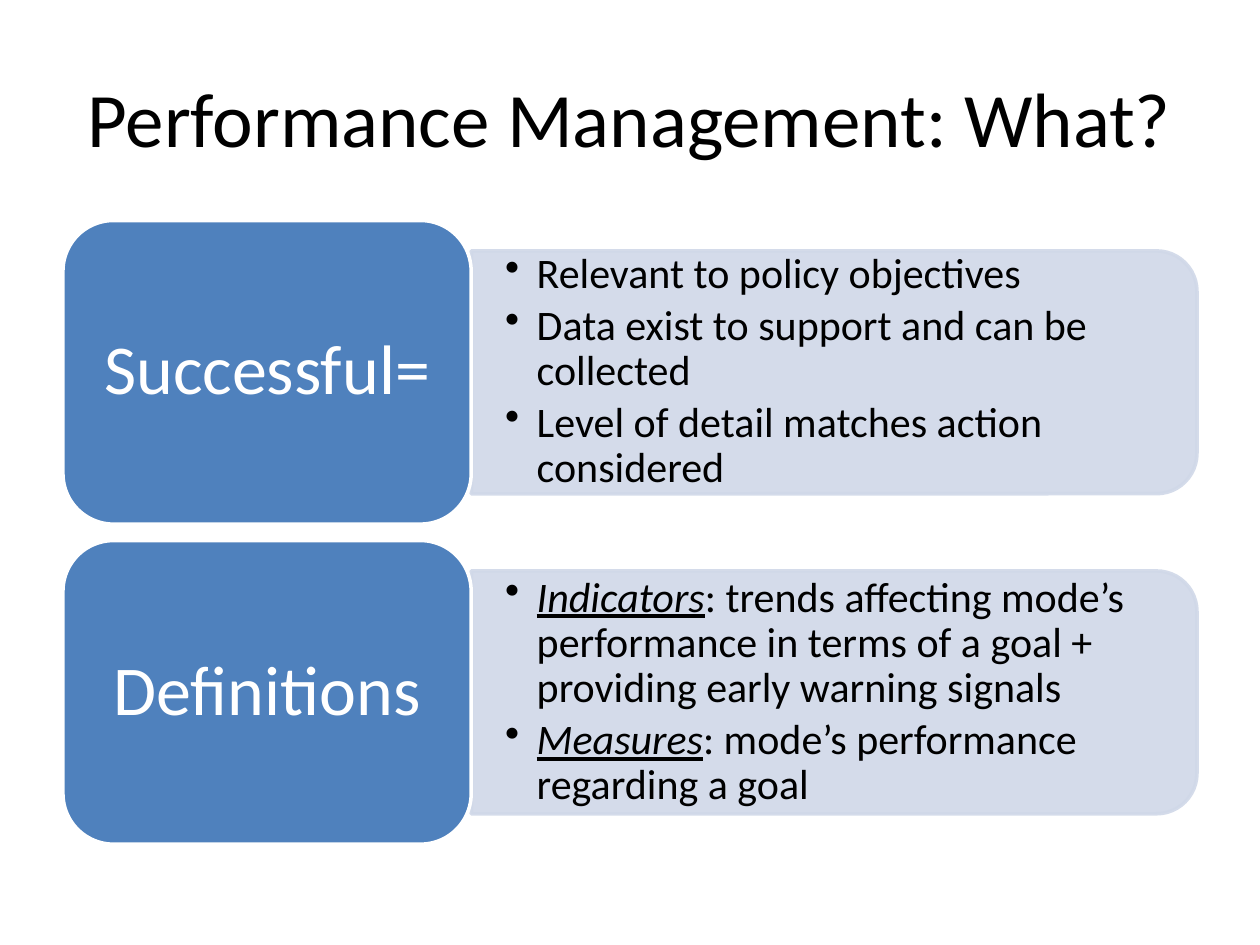
from lxml.etree import SubElement
from pptx import Presentation
from pptx.dml.color import RGBColor
from pptx.enum.shapes import MSO_SHAPE
from pptx.enum.text import MSO_ANCHOR, PP_ALIGN
from pptx.oxml.ns import qn
from pptx.util import Inches, Pt

COLOURS = {"text": "000000", "card": "4F81BD", "panel": "D0D8E8", "white": "FFFFFF"}
PANEL_OPACITY = 90

# Each bullet is a pair: an emphasised term and the plain text after it.
ROWS = [
    ("Successful=", [
        ("", "Relevant to policy objectives"),
        ("", "Data exist to support and can be collected"),
        ("", "Level of detail matches action considered"),
    ]),
    ("Definitions", [
        ("Indicators", ": trends affecting mode’s performance in terms of a goal "
                       "+ providing early warning signals"),
        ("Measures", ": mode’s performance regarding a goal"),
    ]),
]

# Grid in inches: a card column, then a panel column up to the right margin
LEFT, TOP, WIDTH = 0.5, 1.75, 9
CARD_WIDTH, CARD_HEIGHT, ROW_PITCH = 0.36 * WIDTH, 2.41, 2.54
PANEL_LEFT, PANEL_WIDTH = LEFT + CARD_WIDTH, 0.64 * WIDTH
PANEL_HEIGHT = 0.8 * CARD_HEIGHT
BULLET_WIDTH, BULLET_HEIGHT = 5.67, 1.74


def paint(shape, fill, line):
    shape.shadow.inherit = False
    shape.fill.solid()
    shape.fill.fore_color.rgb = RGBColor.from_string(COLOURS[fill])
    shape.line.color.rgb = RGBColor.from_string(COLOURS[line])
    shape.line.width = Pt(2)


def write(para, text, size, colour, **emphasis):
    span = para.add_run()
    span.text = text
    values = {"name": "Calibri", "size": Pt(size), **emphasis}
    for name, value in values.items():
        setattr(span.font, name, value)
    span.font.color.rgb = RGBColor.from_string(COLOURS[colour])


deck = Presentation()
deck.slide_width, deck.slide_height = Inches(10), Inches(7.5)
page = deck.slides.add_slide(deck.slide_layouts[5])

title = page.shapes.title
title.left, title.top = Inches(LEFT), Inches(0.3)
title.width, title.height = Inches(WIDTH), Inches(1.25)
title.text_frame.vertical_anchor = MSO_ANCHOR.MIDDLE
title_para = title.text_frame.paragraphs[0]
title_para.alignment = PP_ALIGN.CENTER
write(title_para, "Performance Management: What?", 44, "text")

for row, (heading, bullets) in enumerate(ROWS):
    card_top = TOP + row * ROW_PITCH
    middle = card_top + CARD_HEIGHT / 2

    # The panel is turned a quarter, so its width and height swap around its centre
    panel = page.shapes.add_shape(
        MSO_SHAPE.ROUND_2_SAME_RECTANGLE,
        Inches(PANEL_LEFT + (PANEL_WIDTH - PANEL_HEIGHT) / 2),
        Inches(middle - PANEL_WIDTH / 2),
        Inches(PANEL_HEIGHT), Inches(PANEL_WIDTH))
    panel.rotation = 90
    paint(panel, "panel", "panel")
    for colour in panel._element.spPr.iter(qn("a:srgbClr")):
        SubElement(colour, qn("a:alpha"), val=str(PANEL_OPACITY * 1000))

    box = page.shapes.add_textbox(
        Inches(PANEL_LEFT), Inches(middle - BULLET_HEIGHT / 2),
        Inches(BULLET_WIDTH), Inches(BULLET_HEIGHT))

    card = page.shapes.add_shape(
        MSO_SHAPE.ROUNDED_RECTANGLE, Inches(LEFT), Inches(card_top),
        Inches(CARD_WIDTH), Inches(CARD_HEIGHT))
    paint(card, "card", "white")

    for shape, side, end in ((box, 0.27, 0.14), (card, 0.17, 0.08)):
        frame_format = {
            "word_wrap": True, "vertical_anchor": MSO_ANCHOR.MIDDLE,
            "margin_left": Inches(side), "margin_right": Inches(side),
            "margin_top": Inches(end), "margin_bottom": Inches(end),
        }
        for name, value in frame_format.items():
            setattr(shape.text_frame, name, value)

    heading_para = card.text_frame.paragraphs[0]
    heading_para.alignment = PP_ALIGN.CENTER
    heading_para.line_spacing = 0.9
    write(heading_para, heading, 40, "white")

    for index, (term, text) in enumerate(bullets):
        frame = box.text_frame
        para = frame.add_paragraph() if index else frame.paragraphs[0]
        bullet_format = {"level": 1, "alignment": PP_ALIGN.LEFT,
                         "line_spacing": 0.9, "space_after": Pt(3.6)}
        for name, value in bullet_format.items():
            setattr(para, name, value)
        properties = para._p.get_or_add_pPr()
        properties.set("marL", str(Inches(0.25)))
        properties.set("indent", str(-Inches(0.25)))
        SubElement(properties, qn("a:buChar"), char="•")
        if term:
            write(para, term, 24, "text", italic=True, underline=True)
        write(para, text, 24, "text")

deck.save("out.pptx")
